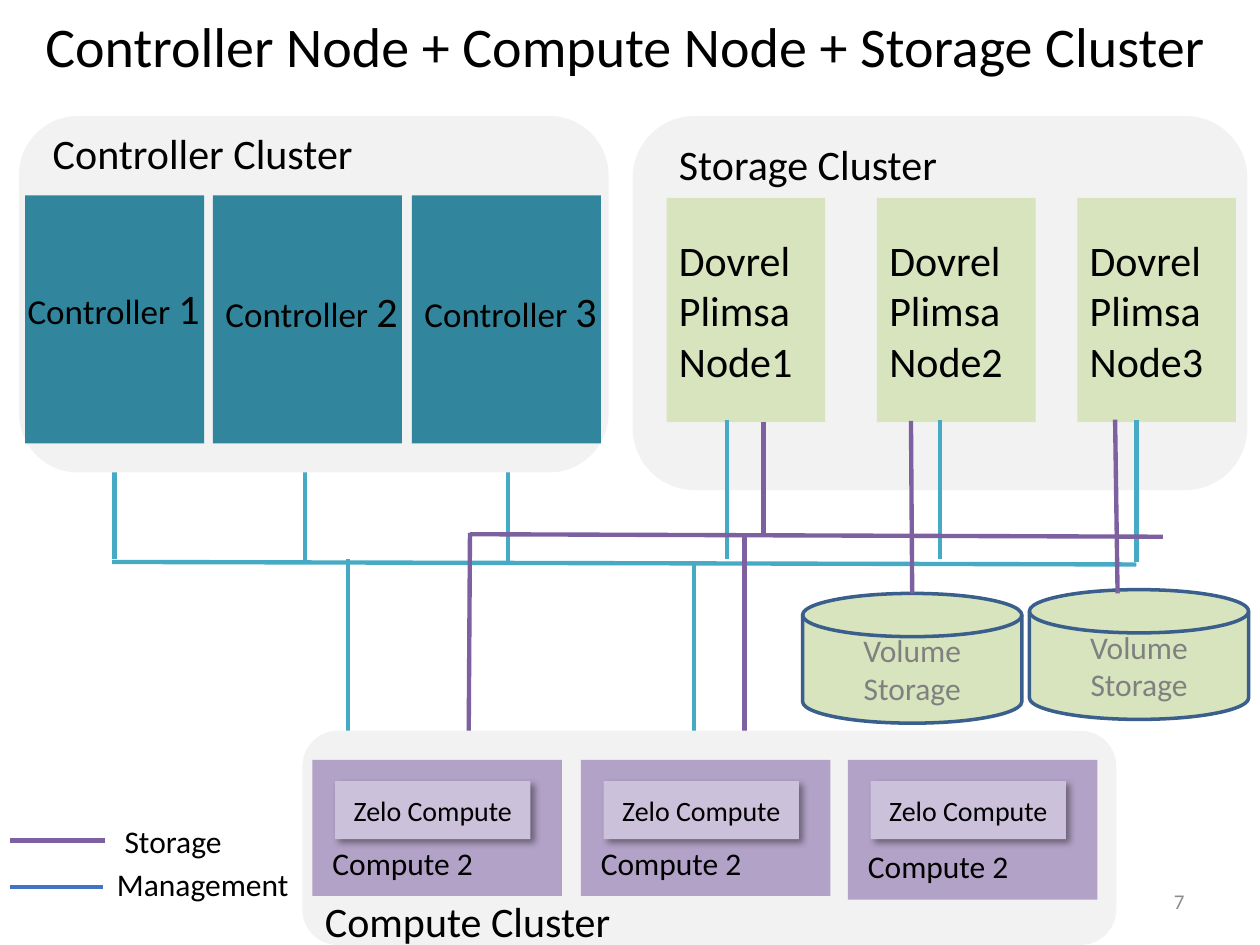
import pptx
import pptx.util
import pptx.dml.color
import pptx.enum.shapes
import pptx.enum.text
import pptx.oxml
import pptx.oxml.ns

theme = dict(
    font="Calibri", ink="000000", grey="808080", pale="8C8C8C", white="FFFFFF",
    panel="F2F2F2", green="D7E4BD", edge="3A5F8C", teal="31859C",
    mauve="B3A2C7", lilac="CCC1DA",
    manage="46AAC5", store="7D60A0", key="4472C4",
    title=32, head=24, name=20, label=18, tag=16, page=12,
    wire=2.5, rim=2,
)

Pt = pptx.util.Pt
Kind = pptx.enum.shapes.MSO_SHAPE
Align = pptx.enum.text.PP_ALIGN
qn = pptx.oxml.ns.qn

deck = pptx.Presentation()
deck.slide_width = pptx.util.Inches(10)
deck.slide_height = pptx.util.Inches(7.5)
slide = deck.slides.add_slide(deck.slide_layouts[6])
shapes = slide.shapes
col = deck.slide_width / 100
row = deck.slide_height / 75


def box(kind, x, y, w, h, fill=None, text="", size="label", align="LEFT",
        ink="ink", rim=None):
    place = [round(n) for n in (x * col, y * row, w * col, h * row)]
    if kind is None:
        item = shapes.add_textbox(*place)
    else:
        item = shapes.add_shape(kind, *place)
        item.shadow.inherit = False
        item.fill.solid()
        item.fill.fore_color.rgb = pptx.dml.color.RGBColor.from_string(theme[fill])
        if rim:
            item.line.color.rgb = pptx.dml.color.RGBColor.from_string(theme[rim])
            item.line.width = Pt(theme["rim"])
        else:
            item.line.fill.background()
    if text:
        frame = item.text_frame
        frame.word_wrap = True
        frame.vertical_anchor = pptx.enum.text.MSO_ANCHOR.MIDDLE
        if align == "LEFT":
            frame.margin_right = 0
        for i, words in enumerate(text.split("\n")):
            para = frame.add_paragraph() if i else frame.paragraphs[0]
            para.add_run().text = words
            para.alignment = Align[align]
            para.font.name = theme["font"]
            para.font.size = Pt(theme[size])
            para.font.color.rgb = pptx.dml.color.RGBColor.from_string(theme[ink])
    return item


def wire(x1, y1, x2, y2, color):
    item = shapes.add_connector(
        pptx.enum.shapes.MSO_CONNECTOR.STRAIGHT,
        round(x1 * col), round(y1 * row), round(x2 * col), round(y2 * row))
    item.line.color.rgb = pptx.dml.color.RGBColor.from_string(theme[color])
    item.line.width = Pt(theme["wire"])
    props = item._element.spPr
    props.append(props.makeelement(qn("a:effectLst"), {}))


box(Kind.ROUNDED_RECTANGLE, 50.2, 9.2, 48.8, 29.7, "panel")
box(Kind.RECTANGLE, 52.9, 10.5, 34.2, 4.9, "panel", "Storage Cluster", "head")
for i, x in enumerate((52.9, 69.6, 85.5), 1):
    box(Kind.RECTANGLE, x, 15.7, 12.6, 17.8, "green",
        f"Dovrel\nPlimsa\nNode{i}", "head")
for x, y in ((63.7, 47.1), (81.7, 46.8)):
    box(Kind.FLOWCHART_MAGNETIC_DISK, x, y, 17.4, 10.3, "green",
        "Volume Storage", align="CENTER", ink="grey", rim="edge")

for x, top, low in (
    (9.1, 33.3, 44.4), (24.2, 33.5, 44.6), (40.3, 33.5, 44.6),
    (57.7, 33.3, 44.4), (74.6, 33.3, 44.4), (90.2, 33.3, 44.6),
    (27.6, 44.4, 59), (55.1, 44.8, 59.4),
):
    wire(x, top, x, low, "manage")
wire(90.2, 44.8, 8.9, 44.6, "manage")
for ends in (
    (60.6, 33.5, 60.6, 42.5), (92.3, 42.6, 37.3, 42.4),
    (37.3, 42.3, 37.2, 58.6), (59.1, 42.4, 59.1, 59),
    (72.3, 33.4, 72.4, 47.1), (88.5, 33.3, 88.7, 47.1),
):
    wire(*ends, "store")

for y, color, x, top, w, text in (
    (70.4, "key", 8.3, 68.6, 18.5, "Management"),
    (66.7, "store", 8.9, 65.2, 12.8, "Storage"),
):
    wire(8.3, y, 0.8, y, color)
    box(Kind.RECTANGLE, x, top, w, 3.1, "white", text, rim="white")

box(None, -4.2, -2.7, 107.7, 12.5, None,
    "Controller Node + Compute Node + Storage Cluster", "title", "CENTER")

box(Kind.ROUNDED_RECTANGLE, 1.5, 9.2, 46.8, 28.3, "panel")
box(None, 3.2, 9.7, 31.9, 4.9, None, "Controller Cluster", "head")
for i, (x, w, left, top) in enumerate(
        ((2, 14.2, 1.2, 20.7), (16.9, 15, 16.9, 21), (32.7, 15, 32.7, 21)), 1):
    box(Kind.RECTANGLE, x, 15.5, w, 19.7, "teal")
    name = box(None, left, top, 16.5, 7.4, None, "Controller ", "name")
    digit = name.text_frame.paragraphs[0].add_run()
    digit.text = str(i)
    digit.font.size = Pt(theme["head"])

box(Kind.ROUNDED_RECTANGLE, 24, 58, 64.6, 17, "panel")
box(None, 24.8, 70.6, 27.2, 4.9, None, "Compute Cluster", "head")
for x, h in ((24.8, 10.8), (46.1, 10.8), (67.3, 11.1)):
    box(Kind.RECTANGLE, x, 60.3, 19.8, h, "mauve")
    tag = box(Kind.RECTANGLE, x + 1.8, 62, 15.5, 4.6, "lilac",
              "Zelo Compute", "tag", "CENTER")
    glow = tag._element.spPr.find(qn("a:effectLst"))
    glow.append(pptx.oxml.parse_xml(
        f'<a:outerShdw {pptx.oxml.ns.nsdecls("a")} blurRad="{Pt(4)}" '
        f'dist="{Pt(3)}" dir="2700000" algn="tl" rotWithShape="0">'
        f'<a:srgbClr val="{theme["ink"]}"><a:alpha val="40000"/></a:srgbClr>'
        '</a:outerShdw>'))
    box(None, x + 0.6, 55.9 + h, 13.3, 3.5, None, "Compute 2")

box(None, 71.7, 69.5, 23.3, 4, None, "7", "page", "RIGHT", "pale")

deck.save("out.pptx")
